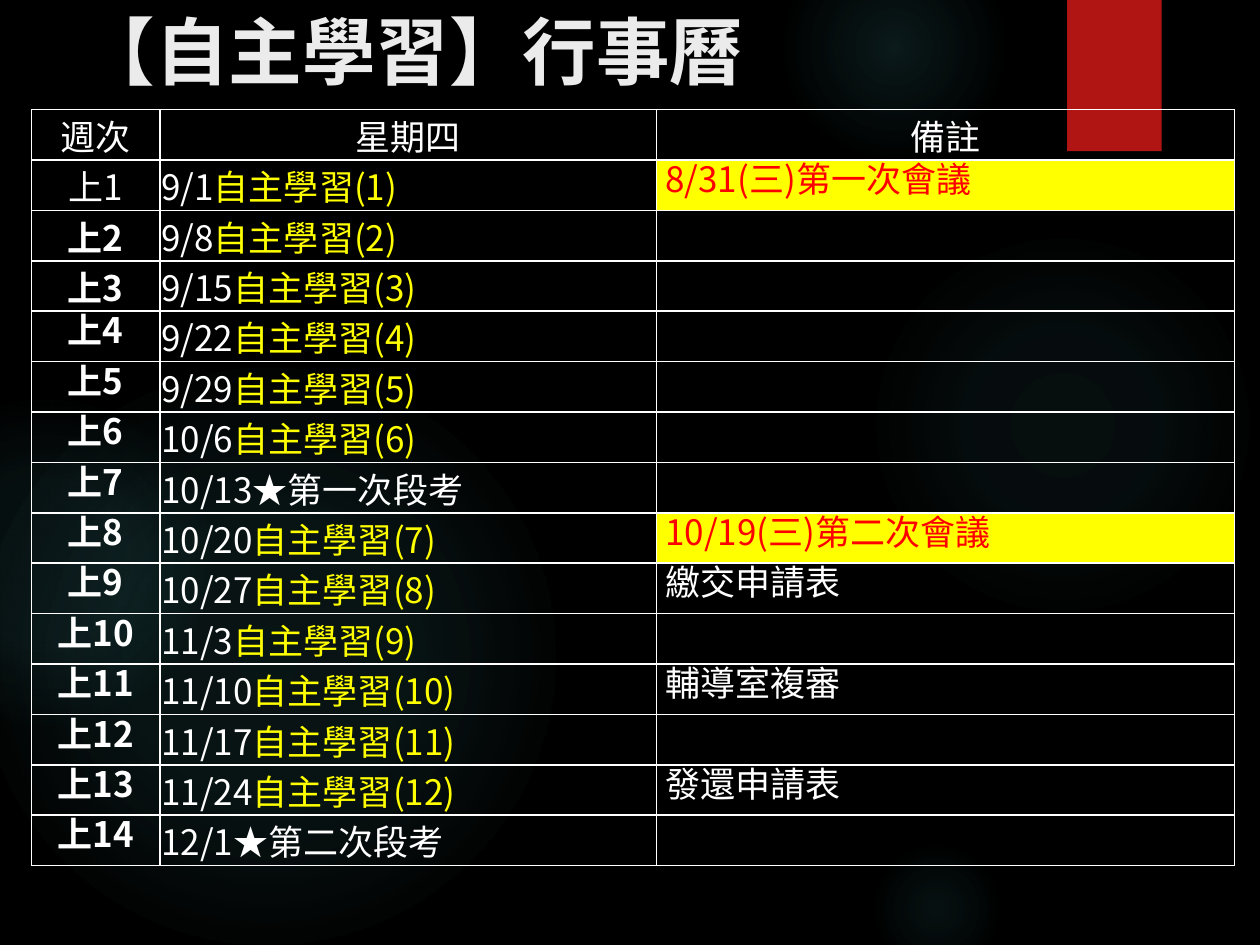
import pptx
import pptx.util
import pptx.dml.color
import pptx.enum.shapes
import pptx.enum.text
import pptx.oxml
import pptx.oxml.ns
from lxml import etree

Inches, Pt = pptx.util.Inches, pptx.util.Pt
RGBColor = pptx.dml.color.RGBColor
SHAPES = pptx.enum.shapes.MSO_SHAPE
ALIGN = pptx.enum.text.PP_ALIGN
ANCHOR = pptx.enum.text.MSO_ANCHOR
qn = pptx.oxml.ns.qn
NAMESPACE = pptx.oxml.ns.nsdecls("a")

BLACK = RGBColor(0x00, 0x00, 0x00)
WHITE = RGBColor(0xFF, 0xFF, 0xFF)
YELLOW = RGBColor(0xFF, 0xFF, 0x00)
RED = RGBColor(0xFF, 0x00, 0x00)
RIBBON_RED = RGBColor(0xB0, 0x15, 0x13)
GLOW_TEAL = RGBColor(0x50, 0xB9, 0xC1)
TITLE_GREY = RGBColor(0xEB, 0xEB, 0xEB)

# Left, top, diameter, then (position, opacity) stops in percent
GLOWS = [
    (6.89, 1.83, 3.08, [(0, 7), (36, 6), (69, 0)]),
    (6.22, -0.5, 1.75, [(0, 14), (36, 7), (73, 0)]),
    (6.89, 6.67, 1.08, [(0, 9), (36, 5), (66, 0)]),
    (-0.17, 2.92, 4.58, [(0, 11), (36, 10), (75, 0)]),
    (-0.92, 3.17, 2.58, [(0, 8), (36, 8), (72, 0)]),
]
HEADINGS = ["週次", "星期四", "備註"]
DATES = ["9/1", "9/8", "9/15", "9/22", "9/29", "10/6", "10/13", "10/20",
         "10/27", "11/3", "11/10", "11/17", "11/24", "12/1"]
EXAMS = {7: "第一次段考", 14: "第二次段考"}
MEETINGS = {1: "8/31(三)第一次會議", 8: "10/19(三)第二次會議"}
NOTES = {9: "繳交申請表", 11: "輔導室複審", 13: "發還申請表"}
COLUMN_WIDTHS = [1.02, 3.94, 4.59]
ROW_HEIGHT = 0.4


class CalendarSlide:
    body_font = "Noto Sans CJK SC"
    star_font = "Noto Sans CJK TC"
    title_font = "TeX Gyre Adventor"
    body_size = 20

    def __init__(self, presentation):
        self.slide = presentation.slides.add_slide(presentation.slide_layouts[6])
        background = self.slide.background.fill
        background.solid()
        background.fore_color.rgb = BLACK

    def style(self, font, color, bold=False, name=body_font, size=body_size):
        font.size, font.bold, font.name = Pt(size), bold, name
        font.color.rgb = color
        if name != self.title_font:
            east_asian = etree.SubElement(font._rPr, qn("a:ea"))
            east_asian.set("typeface", name)

    def shape(self, kind, left, top, width, height):
        shape = self.slide.shapes.add_shape(
            kind, Inches(left), Inches(top), Inches(width), Inches(height))
        shape.shadow.inherit = False
        shape.line.fill.background()
        return shape

    def glow(self, left, top, diameter, stops):
        shape = self.shape(SHAPES.OVAL, left, top, diameter, diameter)
        stop_xml = "".join(
            f'<a:gs pos="{position * 1000}"><a:srgbClr val="{GLOW_TEAL}">'
            f'<a:alpha val="{opacity * 1000}"/></a:srgbClr></a:gs>'
            for position, opacity in stops)
        gradient = pptx.oxml.parse_xml(
            f'<a:gradFill {NAMESPACE}><a:gsLst>{stop_xml}</a:gsLst>'
            '<a:path path="circle"><a:fillToRect l="50000" t="50000" '
            'r="50000" b="50000"/></a:path></a:gradFill>')
        shape._element.spPr.find(qn("a:prstGeom")).addnext(gradient)

    def ribbon(self, left, top, width, height):
        shape = self.shape(SHAPES.RECTANGLE, left, top, width, height)
        shape.fill.solid()
        shape.fill.fore_color.rgb = RIBBON_RED
        shape._element.spPr.find(qn("a:effectLst")).append(pptx.oxml.parse_xml(
            f'<a:outerShdw {NAMESPACE} blurRad="{Pt(3)}" dist="{Pt(2)}" '
            f'dir="5400000" rotWithShape="0"><a:srgbClr val="{BLACK}">'
            '<a:alpha val="45000"/></a:srgbClr></a:outerShdw>'))

    def title(self, text, left, top, width, height):
        box = self.slide.shapes.add_textbox(
            Inches(left), Inches(top), Inches(width), Inches(height))
        box.text_frame.word_wrap = True
        paragraph = box.text_frame.paragraphs[0]
        paragraph.text = text
        self.style(paragraph.font, TITLE_GREY, True, self.title_font, 42)

    def table(self, left, top, row_count):
        frame = self.slide.shapes.add_table(
            row_count, len(COLUMN_WIDTHS), Inches(left), Inches(top),
            Inches(sum(COLUMN_WIDTHS)), Inches(ROW_HEIGHT * row_count))
        table = frame.table
        table.first_row = table.horz_banding = False
        for column, width in zip(table.columns, COLUMN_WIDTHS):
            column.width = Inches(width)
        for row in table.rows:
            row.height = Inches(ROW_HEIGHT)
        return table

    def cell(self, cell, text="", color=WHITE, bold=False, align=ALIGN.LEFT,
             fill=None, line_spacing=None, indent=0.01, drop=0):
        cell.margin_left, cell.margin_right = Inches(indent), Inches(0.01)
        cell.margin_top, cell.margin_bottom = Pt(drop), 0
        cell.vertical_anchor = ANCHOR.MIDDLE
        for side in ("lnL", "lnR", "lnT", "lnB"):
            cell._tc.get_or_add_tcPr().append(pptx.oxml.parse_xml(
                f'<a:{side} {NAMESPACE} w="{Pt(1)}"><a:solidFill>'
                f'<a:srgbClr val="{WHITE}"/></a:solidFill></a:{side}>'))
        if fill is None:
            cell.fill.background()
        else:
            cell.fill.solid()
            cell.fill.fore_color.rgb = fill
        paragraph = cell.text_frame.paragraphs[0]
        paragraph.text = text
        paragraph.alignment = align
        if line_spacing:
            paragraph.line_spacing = Pt(line_spacing)
        self.style(paragraph.font, color, bold)

    def day_cell(self, cell, runs):
        self.cell(cell)
        cell.vertical_anchor = ANCHOR.TOP
        for text, color, name in runs:
            run = cell.text_frame.paragraphs[0].add_run()
            run.text = text
            self.style(run.font, color, name=name)


def main():
    presentation = pptx.Presentation()
    presentation.slide_width, presentation.slide_height = Inches(10), Inches(7.5)
    calendar = CalendarSlide(presentation)

    # Backdrop
    for glow in GLOWS:
        calendar.glow(*glow)
    calendar.ribbon(8.47, 0, 0.75, 1.2)

    # Title and table heading
    calendar.title("【自主學習】行事曆", 0.55, 0, 7.72, 1.53)
    table = calendar.table(0.25, 0.87, len(DATES) + 1)
    for column, heading in enumerate(HEADINGS):
        calendar.cell(table.cell(0, column), heading, align=ALIGN.CENTER)

    # One row per week; sessions are numbered around the exams
    session = 0
    for week, date in enumerate(DATES, 1):
        week_cell, day_cell, note_cell = (table.cell(week, c) for c in range(3))
        tight = {"line_spacing": 10, "drop": 10} if week > 3 else {}
        calendar.cell(week_cell, f"上{week}", bold=week > 1,
                      align=ALIGN.CENTER, **tight)

        runs = [(date, WHITE, calendar.body_font)]
        if week in EXAMS:
            runs += [("★", WHITE, calendar.star_font),
                     (EXAMS[week], WHITE, calendar.body_font)]
        else:
            session += 1
            runs.append((f"自主學習({session})", YELLOW, calendar.body_font))
        calendar.day_cell(day_cell, runs)

        note_style = {"align": ALIGN.JUSTIFY, "line_spacing": 20, "indent": 0.07}
        if week in MEETINGS:
            calendar.cell(note_cell, MEETINGS[week], RED, fill=YELLOW, **note_style)
        else:
            calendar.cell(note_cell, NOTES.get(week, ""), **note_style)

    presentation.save("out.pptx")


if __name__ == "__main__":
    main()
